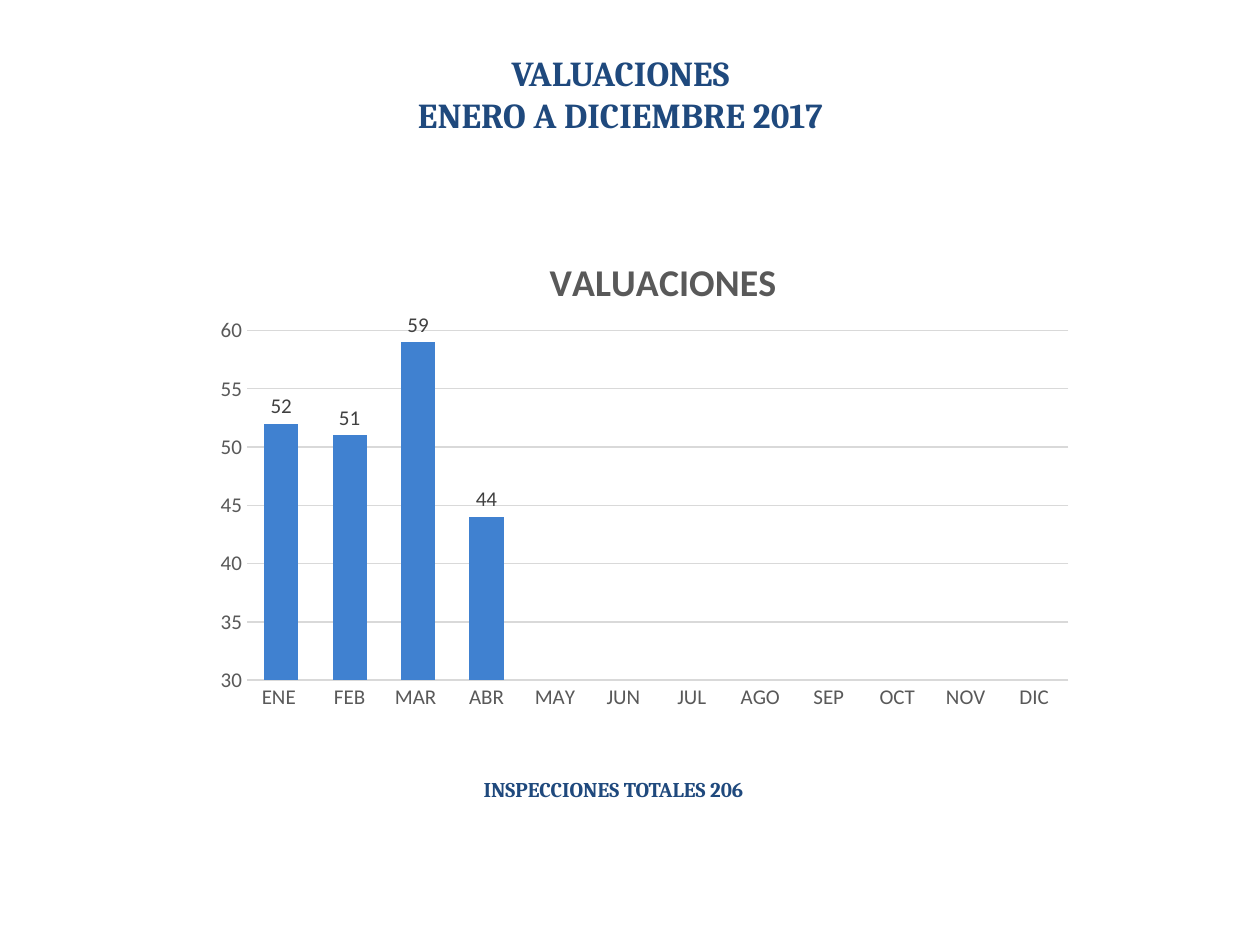
from lxml.etree import SubElement
from pptx import Presentation
from pptx.chart.data import CategoryChartData
from pptx.dml.color import RGBColor
from pptx.enum.chart import XL_CHART_TYPE, XL_LABEL_POSITION, XL_TICK_MARK
from pptx.enum.text import MSO_ANCHOR, MSO_AUTO_SIZE, PP_ALIGN
from pptx.oxml import parse_xml
from pptx.oxml.ns import nsdecls, qn
from pptx.util import Inches, Pt

WIDTH, HEIGHT = 10, 7.5
NAVY, BLUE, GREY, DARK, PALE = "1F497D", "4081D0", "595959", "404040", "D9D9D9"
MONTHS = ["ENE ", "FEB", "MAR ", "ABR", "MAY", "JUN",
          "JUL", "AGO", "SEP", "OCT", "NOV", "DIC"]
VALUATIONS = [52, 51, 59, 44] + [None] * 8


def color(value):
    return RGBColor.from_string(value)


def set_font(font, name, size, value, bold=False):
    font.name, font.size, font.bold = name, Pt(size), bold
    font.color.rgb = color(value)


def set_layout(parent, index, **shares):
    """Fix a chart part's place, in shares of the chart."""
    for old in parent.findall(qn("c:layout")):
        parent.remove(old)
    layout = parse_xml(f"<c:layout {nsdecls('c')}><c:manualLayout/></c:layout>")
    manual = layout[0]
    if "w" in shares:
        SubElement(manual, qn("c:layoutTarget")).set("val", "inner")
    for side in ("xMode", "yMode"):
        SubElement(manual, qn(f"c:{side}")).set("val", "edge")
    for key, share in shares.items():
        SubElement(manual, qn(f"c:{key}")).set("val", str(share))
    parent.insert(index, layout)


class SlideBuilder:
    """Holds the slide; places are shares of its width and height."""

    def __init__(self, presentation):
        self.slide = presentation.slides.add_slide(presentation.slide_layouts[5])

    def box(self, left, top, width, height):
        return (Inches(left * WIDTH), Inches(top * HEIGHT),
                Inches(width * WIDTH), Inches(height * HEIGHT))

    def add_lines(self, shape, lines, size, align, wrap):
        frame = shape.text_frame
        frame.word_wrap = wrap
        frame.auto_size = MSO_AUTO_SIZE.SHAPE_TO_FIT_TEXT
        frame.vertical_anchor = MSO_ANCHOR.TOP
        for index, line in enumerate(lines):
            paragraph = frame.add_paragraph() if index else frame.paragraphs[0]
            paragraph.alignment = align
            paragraph.space_before = Pt(0)
            run = paragraph.add_run()
            run.text = line
            set_font(run.font, "Cambria", size, NAVY, True)

    def title(self, lines, place):
        shape = self.slide.shapes.title
        shape.left, shape.top, shape.width, shape.height = self.box(*place)
        self.add_lines(shape, lines, 20, PP_ALIGN.CENTER, False)

    def caption(self, text, place):
        shape = self.slide.shapes.add_textbox(*self.box(*place))
        self.add_lines(shape, [text], 12, PP_ALIGN.LEFT, True)

    def column_chart(self, title, categories, values, place):
        data = CategoryChartData()
        data.categories = categories
        data.add_series(title, values)
        chart = self.slide.shapes.add_chart(
            XL_CHART_TYPE.COLUMN_CLUSTERED, *self.box(*place), data).chart
        set_font(chart.font, "Calibri", 10, "000000")
        chart.has_legend = False
        self.chart_title(chart, title)
        self.axes(chart)
        self.columns(chart.plots[0])
        plot_area = chart.value_axis._element.getparent()
        set_layout(plot_area, 0, x=0.05, y=0.215, w=0.93, h=0.705)

    def chart_title(self, chart, text):
        chart.has_title = True
        chart_title = chart.chart_title
        run = chart_title.text_frame.paragraphs[0].add_run()
        run.text = text
        set_font(run.font, "Calibri", 21.6, GREY, True)
        set_layout(chart_title._element, 1, x=0.385, y=0.05)

    def axes(self, chart):
        for axis in (chart.category_axis, chart.value_axis):
            axis.major_tick_mark = axis.minor_tick_mark = XL_TICK_MARK.NONE
            set_font(axis.tick_labels.font, "Calibri", 12, GREY)
        category_line = chart.category_axis.format.line
        category_line.color.rgb, category_line.width = color(PALE), Pt(1)
        value_axis = chart.value_axis
        value_axis.minimum_scale, value_axis.maximum_scale = 30, 60
        value_axis.major_unit = 5
        value_axis.format.line.fill.background()
        grid = value_axis.major_gridlines.format.line
        grid.color.rgb, grid.width = color(PALE), Pt(0.75)

    def columns(self, plot):
        plot.gap_width, plot.overlap = 100, -24
        plot.vary_by_categories = False
        series = plot.series[0]
        series.format.fill.solid()
        series.format.fill.fore_color.rgb = color(BLUE)
        labels = series.data_labels
        labels.show_value = True
        labels.position = XL_LABEL_POSITION.OUTSIDE_END
        set_font(labels.font, "Calibri", 12, DARK)


def main():
    presentation = Presentation()
    presentation.slide_width = Inches(WIDTH)
    presentation.slide_height = Inches(HEIGHT)
    builder = SlideBuilder(presentation)
    builder.title(["VALUACIONES", "ENERO A DICIEMBRE 2017"],
                  (0.312, 0.048, 0.361, 0.103))
    builder.column_chart("VALUACIONES", MONTHS, VALUATIONS,
                         (0.161, 0.237, 0.701, 0.525))
    builder.caption("INSPECCIONES TOTALES 206", (0.374, 0.815, 0.244, 0.04))
    presentation.save("out.pptx")


if __name__ == "__main__":
    main()
